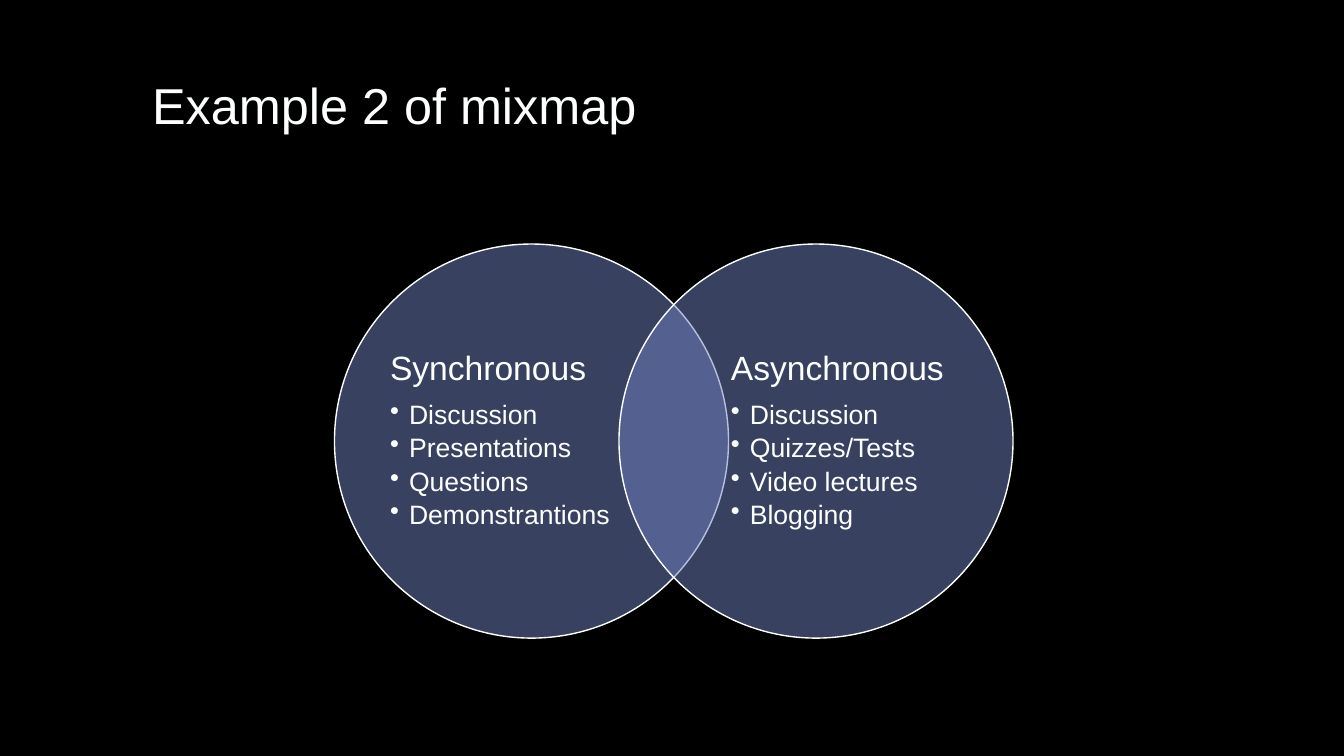
from lxml import etree
from pptx import Presentation
from pptx.dml.color import RGBColor
from pptx.enum.shapes import MSO_SHAPE
from pptx.enum.text import MSO_ANCHOR, PP_ALIGN
from pptx.oxml.ns import qn
from pptx.util import Cm, Pt

OVAL = MSO_SHAPE.OVAL
MIDDLE = MSO_ANCHOR.MIDDLE
LEFT = PP_ALIGN.LEFT

FONT = "Arial"
BLACK, WHITE, BLUE = "000000", "FEFFFF", "7182C0"
SIZE = 9.93  # circle diameter in cm
INDENT = 0.48  # bullet indent in cm

# Circle left, text left, heading, points
SIDES = [
    (8.43, 9.83, "Synchronous",
     ["Discussion", "Presentations", "Questions", "Demonstrantions"]),
    (15.6, 18.42, "Asynchronous",
     ["Discussion", "Quizzes/Tests", "Video lectures", "Blogging"]),
]


def paint(color, value):
    color.rgb = RGBColor.from_string(value)


def write(para, text, size, after=0, bullet=False):
    if bullet:
        para.level = 1
        props = para._p.get_or_add_pPr()
        props.set("marL", str(Cm(INDENT)))
        props.set("indent", str(-Cm(INDENT)))
        etree.SubElement(props, qn("a:buChar")).set("char", "•")
    para.text = text
    para.alignment = LEFT
    para.line_spacing = 0.9
    para.space_after = Pt(after)
    para.font.name = FONT
    para.font.size = Pt(size)
    paint(para.font.color, WHITE)


def add_title(slide, text):
    title = slide.shapes.title
    title.left, title.top = Cm(3.58), Cm(1.22)
    title.width, title.height = Cm(26.7), Cm(3)
    title.text_frame.vertical_anchor = MIDDLE
    write(title.text_frame.paragraphs[0], text, 36)


def add_circle(slide, left):
    circle = slide.shapes.add_shape(OVAL, Cm(left), Cm(6.15), Cm(SIZE), Cm(SIZE))
    circle.shadow.inherit = False
    circle.fill.solid()
    paint(circle.fill.fore_color, BLUE)
    # Half transparent, so the overlap shows
    tint = circle._element.spPr.find(qn("a:solidFill"))[0]
    etree.SubElement(tint, qn("a:alpha")).set("val", "50000")
    paint(circle.line.color, WHITE)
    circle.line.width = Pt(1)


def add_list(slide, left, head, points):
    box = slide.shapes.add_textbox(Cm(left), Cm(7.32), Cm(5.74), Cm(7.59))
    frame = box.text_frame
    frame.word_wrap = True
    frame.vertical_anchor = MIDDLE
    frame.margin_left = frame.margin_right = 0
    frame.margin_top = frame.margin_bottom = 0
    write(frame.paragraphs[0], head, 24, after=9.6)
    for point in points:
        write(frame.add_paragraph(), point, 19, after=3.3, bullet=True)


def main():
    deck = Presentation()
    deck.slide_width, deck.slide_height = Cm(33.87), Cm(19.05)
    slide = deck.slides.add_slide(deck.slide_layouts[5])

    # Background and title
    fill = slide.background.fill
    fill.solid()
    paint(fill.fore_color, BLACK)
    add_title(slide, "Example 2 of mixmap")

    # Overlapping circles with their lists
    for circle_left, text_left, head, points in SIDES:
        add_circle(slide, circle_left)
        add_list(slide, text_left, head, points)

    deck.save("out.pptx")


if __name__ == "__main__":
    main()
